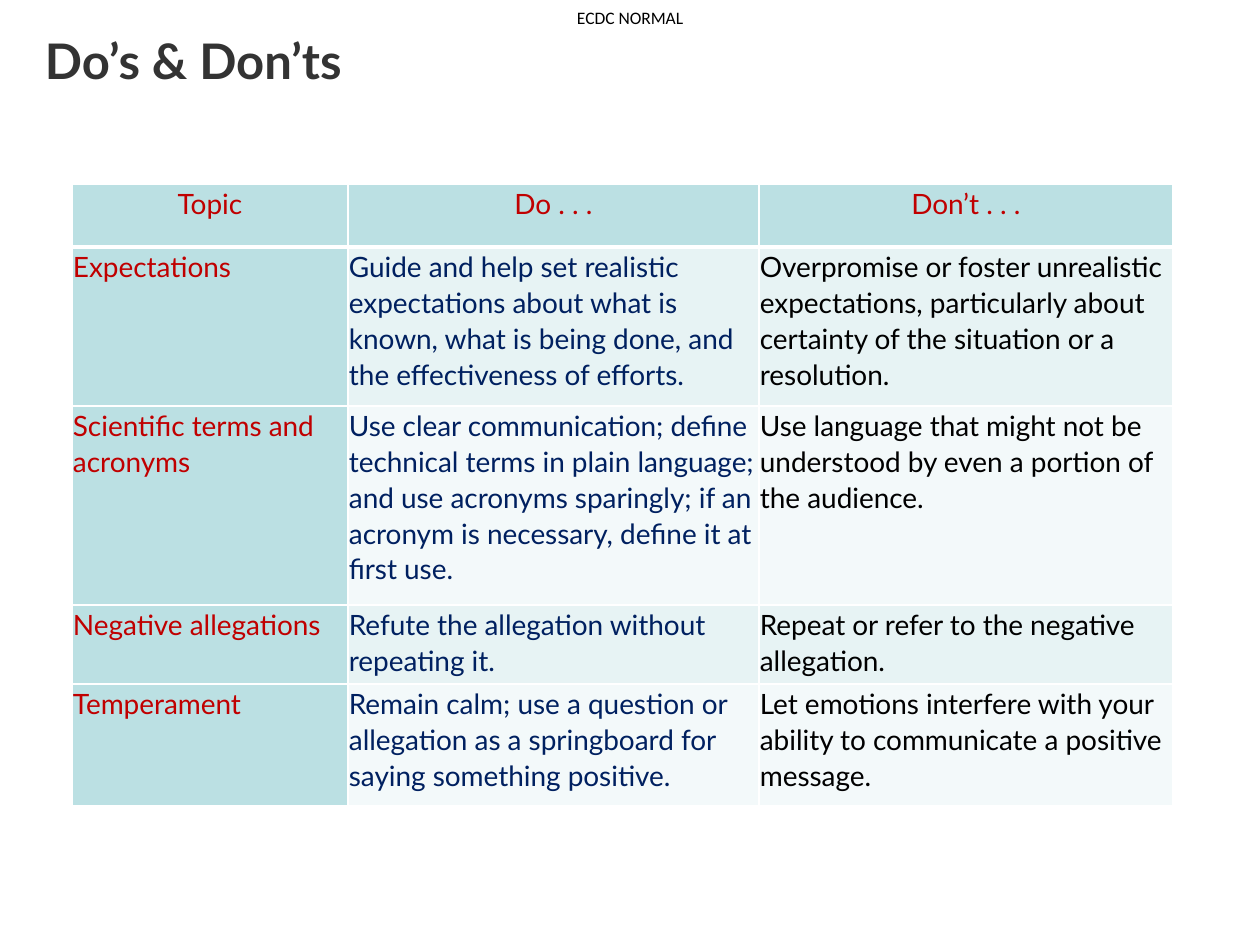
from lxml.etree import SubElement
from pptx import Presentation
from pptx.dml.color import RGBColor
from pptx.enum.text import PP_ALIGN
from pptx.oxml.ns import qn
from pptx.util import Pt

THEME = {
    "head": "BBE0E3", "bands": ("E7F3F4", "F3F9FA"), "rule": "FFFFFF",
    "cols": ("C00000", "002060", "000000"), "title": "333333", "mark": "000000",
    "sizes": {"mark": 10, "title": 28, "cell": 16},
}
SIZES = THEME["sizes"]


def px(n):
    return round(n * 914400 / 126)


def write(frame, text, size, color, font="Lato", bold=False, align=PP_ALIGN.LEFT,
          lead=0.9, after=0, inset=0, wrap=True):
    frame.margin_left = frame.margin_right = px(inset)
    frame.margin_top = frame.margin_bottom = px(inset)
    frame.word_wrap = wrap
    para = frame.paragraphs[0]
    para.alignment = align
    para.line_spacing = lead
    para.space_after = Pt(after)
    run = para.add_run()
    run.text = text
    run.font.name = font
    run.font.size = Pt(size)
    run.font.bold = bold
    run.font.color.rgb = RGBColor.from_string(color)


deck = Presentation()
deck.slide_width, deck.slide_height = px(1260), px(945)
slide = deck.slides.add_slide(deck.slide_layouts[6])

mark = slide.shapes.add_textbox(px(577), px(9), px(111), px(21))
write(mark.text_frame, "ECDC NORMAL", SIZES["mark"], THEME["mark"],
      font="Calibri", wrap=False)

title = slide.shapes.add_textbox(px(45), px(37), px(1134), px(97))
write(title.text_frame, "Do’s & Don’ts", SIZES["title"], THEME["title"], bold=True)

rows = [
    ("Topic", "Do . . .", "Don’t . . ."),
    ("Expectations",
     "Guide and help set realistic expectations about what is known, "
     "what is being done, and the effectiveness of efforts.",
     "Overpromise or foster unrealistic expectations, particularly about "
     "certainty of the situation or a resolution."),
    ("Scientific terms and acronyms",
     "Use clear communication; define technical terms in plain language; "
     "and use acronyms sparingly; if an acronym is necessary, define it at first use.",
     "Use language that might not be understood by even a portion of the audience."),
    ("Negative allegations",
     "Refute the allegation without repeating it.",
     "Repeat or refer to the negative allegation."),
    ("Temperament",
     "Remain calm; use a question or allegation as a springboard "
     "for saying something positive.",
     "Let emotions interfere with your ability to communicate a positive message."),
]
widths = (276, 411, 414)
heights = (63, 159, 199, 79, 122)

table = slide.shapes.add_table(len(rows), len(widths), px(72), px(184),
                               px(sum(widths)), px(sum(heights))).table
table.first_row = table.horz_banding = False
for col, width in zip(table.columns, widths):
    col.width = px(width)
for row, height in zip(table.rows, heights):
    row.height = px(height)

for r, texts in enumerate(rows):
    for c, text in enumerate(texts):
        cell = table.cell(r, c)
        head = r == 0
        write(cell.text_frame, text, SIZES["cell"], THEME["cols"][0 if head else c],
              align=PP_ALIGN.CENTER if head else PP_ALIGN.LEFT,
              lead=1.07, after=8)
        cell.margin_left = cell.margin_right = px(1)
        cell.margin_top = cell.margin_bottom = px(1)
        props = cell._tc.get_or_add_tcPr()
        for side in ("lnL", "lnR", "lnT", "lnB"):
            thick = 3 if head and side == "lnB" else 1
            line = SubElement(props, qn(f"a:{side}"), w=str(Pt(thick)))
            paint = SubElement(line, qn("a:solidFill"))
            SubElement(paint, qn("a:srgbClr"), val=THEME["rule"])
        cell.fill.solid()
        shade = THEME["head"] if head or c == 0 else THEME["bands"][(r - 1) % 2]
        cell.fill.fore_color.rgb = RGBColor.from_string(shade)

deck.save("out.pptx")
